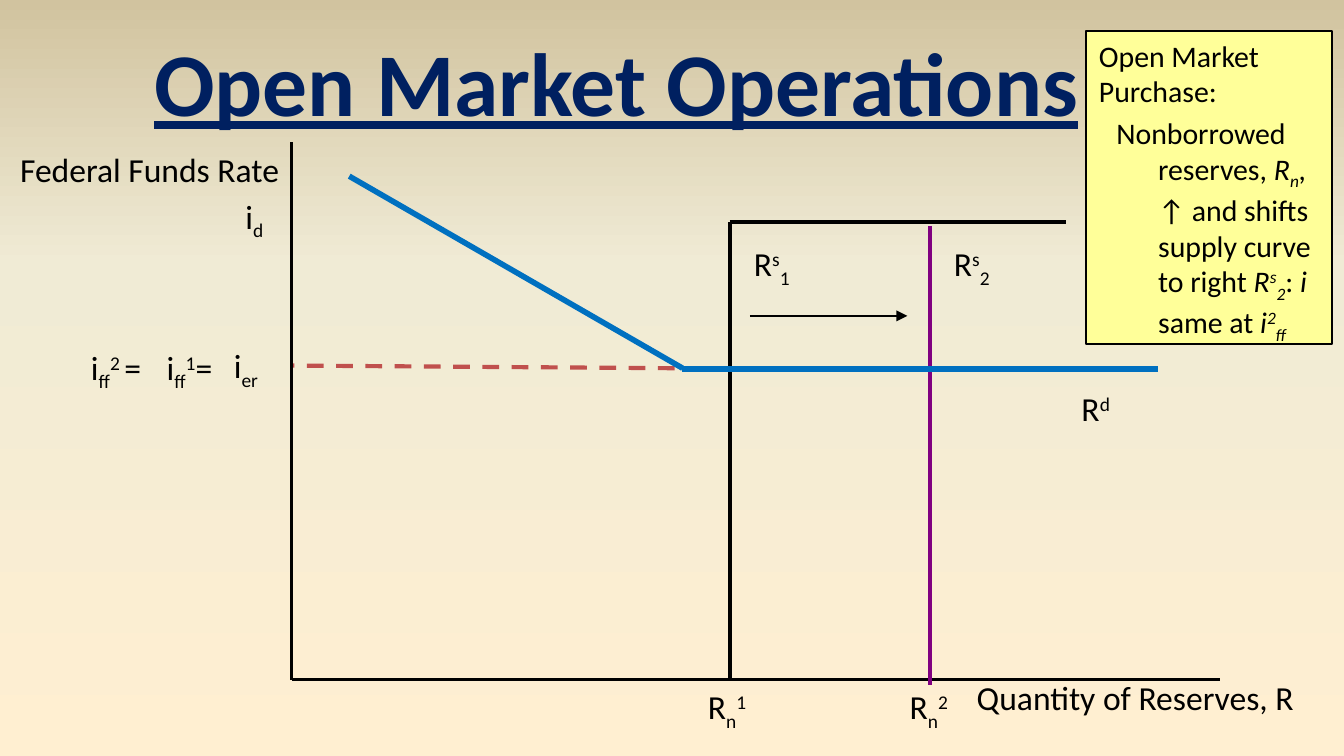
"""Build the open market operations slide with its reserves market diagram."""
from copy import deepcopy
from typing import NamedTuple

from lxml import etree
from pptx import Presentation
from pptx.dml.color import RGBColor
from pptx.enum.dml import MSO_LINE
from pptx.enum.shapes import MSO_CONNECTOR, MSO_SHAPE
from pptx.enum.text import MSO_ANCHOR, MSO_AUTO_SIZE, PP_ALIGN
from pptx.oxml.ns import qn
from pptx.util import Cm, Pt

STRAIGHT = MSO_CONNECTOR.STRAIGHT
RECTANGLE = MSO_SHAPE.RECTANGLE
DASH = MSO_LINE.DASH
TOP = MSO_ANCHOR.TOP
FIT_SHAPE = MSO_AUTO_SIZE.SHAPE_TO_FIT_TEXT
LEFT, CENTER = PP_ALIGN.LEFT, PP_ALIGN.CENTER

BLACK = RGBColor(0x00, 0x00, 0x00)
NAVY = RGBColor(0x00, 0x20, 0x60)
BLUE = RGBColor(0x00, 0x70, 0xC0)
PURPLE = RGBColor(0x80, 0x00, 0x80)
RED = RGBColor(0xC0, 0x50, 0x4D)
YELLOW = RGBColor(0xFF, 0xFF, 0x99)
CREAM = RGBColor(0xFF, 0xEF, 0xD1)
SAND = RGBColor(0xF0, 0xEB, 0xD5)
TAN = RGBColor(0xD1, 0xC3, 0x9F)

FONT = "Calibri"
SUB, SUPER = -25, 30
LABEL_HEIGHT = 1.02
AXIS_X, AXIS_Y = 5.51, 12.85
SUPPLY_X, NEW_SUPPLY_X = 13.79, 17.58
DISCOUNT_Y = 4.19
RATE_Y = 6.43
SUPPLY_LABEL_Y = 4.47


class Run(NamedTuple):
    text: str
    baseline: int = 0
    italic: bool = False


class Segment(NamedTuple):
    x1: float
    y1: float
    x2: float
    y2: float
    color: RGBColor
    width: float
    dashed: bool = False
    arrow: bool = False


class Label(NamedTuple):
    left: float
    top: float
    width: float
    runs: tuple[Run, ...]
    wrap: bool = False
    align: PP_ALIGN = LEFT
    height: float = LABEL_HEIGHT
    size: float = 18
    color: RGBColor = BLACK
    heading: bool = False


SEGMENTS = (
    Segment(AXIS_X, 2.69, AXIS_X, AXIS_Y, BLACK, 1.5),
    Segment(AXIS_X, AXIS_Y, 23.06, AXIS_Y, BLACK, 1.5),
    Segment(NEW_SUPPLY_X, 4.27, NEW_SUPPLY_X, 12.95, PURPLE, 2.25),
    Segment(14.17, 5.97, 17.15, 5.97, BLACK, 0.75, arrow=True),
    Segment(12.75, 6.96, 5.54, 6.91, RED, 2.25, dashed=True),
    Segment(6.6, 3.33, 12.9, 6.96, BLUE, 3),
    Segment(SUPPLY_X, AXIS_Y, SUPPLY_X, DISCOUNT_Y, BLACK, 2.25),
    Segment(SUPPLY_X, DISCOUNT_Y, 20.14, DISCOUNT_Y, BLACK, 2.25),
    Segment(12.88, 6.98, 21.89, 6.98, BLUE, 3),
)

LABELS = (
    Label(4.39, 3.58, 0.89, (Run("i"), Run("d", SUB))),
    Label(13.13, AXIS_Y, 1.45, (Run("R"), Run("n", SUB), Run("1", SUPER))),
    Label(16.94, AXIS_Y, 1.45, (Run("R"), Run("n", SUB), Run("2", SUPER))),
    Label(14, SUPPLY_LABEL_Y, 1.42, (Run("R"), Run("s", SUPER), Run("1", SUB))),
    Label(17.78, SUPPLY_LABEL_Y, 1.42, (Run("R"), Run("s", SUPER), Run("2", SUB))),
    Label(20.19, 7.21, 1.19, (Run("R"), Run("d", SUPER))),
    Label(0, 2.69, 5.66, (Run("Federal Funds Rate"),), True, CENTER),
    Label(18.21, 12.67, 6.55, (Run("Quantity of Reserves, R"),), True),
    Label(2.9, RATE_Y, 1.52, (Run("i"), Run("ff", SUB), Run("1", SUPER), Run("="))),
    Label(1.47, RATE_Y, 1.73,
          (Run("i"), Run("ff", SUB), Run("2 ", SUPER), Run("=")), True),
    Label(4.17, 6.4, 1.35, (Run("i"), Run("er", SUB)), True),
    Label(2.57, 0.38, 18.16, (Run("Open Market Operations"),), align=CENTER,
          height=2.31, size=48, color=NAVY, heading=True),
)

PURCHASE_HEADING = (Run("Open Market Purchase:"),)
PURCHASE_EFFECT = (
    Run("Nonborrowed reserves, "),
    Run("R", italic=True), Run("n", SUB, True), Run(", ", italic=True),
    Run("↑ and shifts supply curve to right "),
    Run("R", italic=True), Run("s", SUPER, True), Run("2", SUB, True),
    Run(": "), Run("i", italic=True), Run(" same at "),
    Run("i", italic=True), Run("2", SUPER, True), Run("ff", SUB, True),
)


def paint_background(slide) -> None:
    fill = slide.background.fill
    fill.gradient()
    fill.gradient_angle = 90
    stop_list = slide.element.find(".//" + qn("a:gsLst"))
    stop_list.insert(1, deepcopy(stop_list[0]))
    for stop, position, color in zip(
            fill.gradient_stops, (0, 0.65, 1), (CREAM, SAND, TAN)):
        stop.position = position
        stop.color.rgb = color


def draw_segment(slide, segment: Segment) -> None:
    connector = slide.shapes.add_connector(
        STRAIGHT, Cm(segment.x1), Cm(segment.y1), Cm(segment.x2), Cm(segment.y2))
    line = connector.line
    line.color.rgb = segment.color
    line.width = Pt(segment.width)
    if segment.dashed:
        line.dash_style = DASH
    properties = connector.element.spPr
    if segment.arrow:
        etree.SubElement(properties.find(qn("a:ln")), qn("a:tailEnd"), type="triangle")
    etree.SubElement(properties, qn("a:effectLst"))


def write_runs(paragraph, runs: tuple[Run, ...], size: float,
               color: RGBColor = BLACK, heading: bool = False) -> None:
    for part in runs:
        run = paragraph.add_run()
        run.text = part.text
        font = run.font
        font.name, font.size = FONT, Pt(size)
        font.color.rgb = color
        if heading:
            font.bold = font.underline = True
        if part.italic:
            font.italic = True
        if part.baseline:
            run.font._element.set("baseline", str(part.baseline * 1000))


def draw_label(slide, label: Label) -> None:
    frame = slide.shapes.add_textbox(
        Cm(label.left), Cm(label.top), Cm(label.width), Cm(label.height)).text_frame
    frame.word_wrap = label.wrap
    frame.auto_size = FIT_SHAPE
    paragraph = frame.paragraphs[0]
    paragraph.alignment = label.align
    write_runs(paragraph, label.runs, label.size, label.color, label.heading)


def draw_purchase_note(slide) -> None:
    note = slide.shapes.add_shape(RECTANGLE, Cm(20.52), Cm(0.58), Cm(4.65), Cm(5.92))
    note.shadow.inherit = False
    note.fill.solid()
    note.fill.fore_color.rgb = YELLOW
    note.line.color.rgb = BLACK
    note.line.width = Pt(1)
    frame = note.text_frame
    frame.word_wrap = True
    frame.vertical_anchor = TOP
    heading, effect = frame.paragraphs[0], frame.add_paragraph()
    for paragraph, runs in ((heading, PURCHASE_HEADING), (effect, PURCHASE_EFFECT)):
        paragraph.alignment = LEFT
        paragraph.space_before = Pt(3.2)
        write_runs(paragraph, runs, 16)
    effect.level = 1
    indents = effect._p.get_or_add_pPr()
    indents.set("marL", str(Cm(1.12)))
    indents.set("indent", str(Cm(-0.79)))


def main() -> None:
    presentation = Presentation()
    presentation.slide_width, presentation.slide_height = Cm(25.4), Cm(14.29)
    slide = presentation.slides.add_slide(presentation.slide_layouts[6])
    paint_background(slide)
    for segment in SEGMENTS:
        draw_segment(slide, segment)
    for label in LABELS:
        draw_label(slide, label)
    draw_purchase_note(slide)
    presentation.save("out.pptx")


if __name__ == "__main__":
    main()
